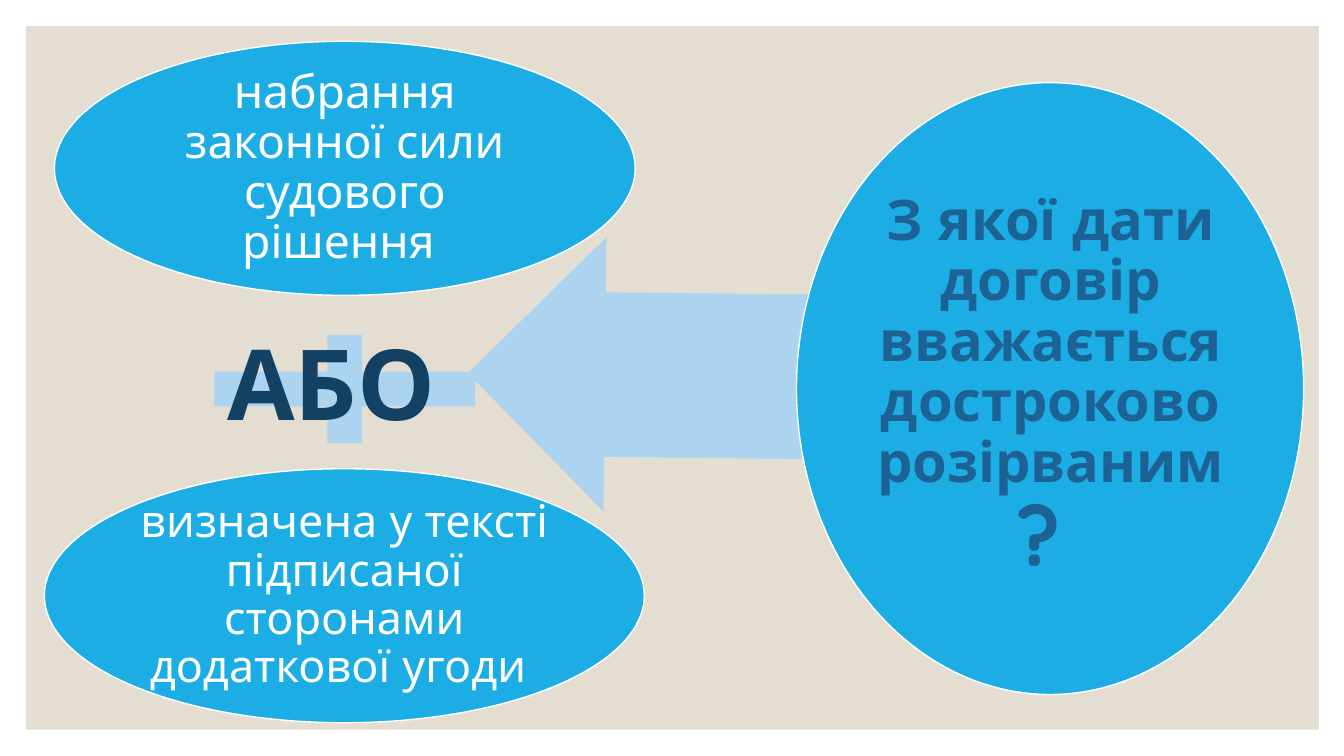
"""Build the slide on the date from which a contract counts as terminated early."""
from dataclasses import dataclass
from typing import Optional

from pptx import Presentation
from pptx.dml.color import RGBColor
from pptx.enum.shapes import MSO_SHAPE as Preset
from pptx.enum.text import MSO_ANCHOR as Anchor, MSO_AUTO_SIZE as AutoSize, PP_ALIGN as Align
from pptx.util import Emu, Pt

EMU_PER_PX = 9144
FONT = "Quicksand"
WHITE = RGBColor(0xFF, 0xFF, 0xFF)
SAND = RGBColor(0xE3, 0xDE, 0xD1)
BLUE = RGBColor(0x1C, 0xAD, 0xE4)
PALE_BLUE = RGBColor(0xAC, 0xD3, 0xEF)
NAVY = RGBColor(0x13, 0x41, 0x63)
DEEP_BLUE = RGBColor(0x1D, 0x62, 0x94)


def px(length: int) -> Emu:
    """Turn px into EMU."""
    return Emu(length * EMU_PER_PX)


@dataclass(frozen=True)
class Phrase:
    """Words in one size and colour."""
    words: str
    size: int
    colour: RGBColor = WHITE
    bold: bool = False


@dataclass(frozen=True)
class Figure:
    """A filled preset shape with an optional phrase inside."""
    preset: Preset
    box: tuple[int, int, int, int]
    fill: RGBColor
    outlined: bool = False
    phrase: Optional[Phrase] = None
    inset: int = 0
    rotation: float = 0
    adjustments: tuple[float, ...] = ()


FIGURES = (
    Figure(Preset.RECTANGLE, (26, 26, 1282, 698), SAND),
    Figure(Preset.OVAL, (54, 41, 576, 252), BLUE, True,
           Phrase("набрання законної сили судового рішення ", 33), 5),
    Figure(Preset.MATH_PLUS, (166, 313, 352, 146), PALE_BLUE,
           phrase=Phrase("АБО ", 70, NAVY, True)),
    Figure(Preset.OVAL, (44, 465, 595, 252), BLUE, True,
           Phrase("визначена у тексті підписаної сторонами додаткової угоди ", 32), 4),
    Figure(Preset.RIGHT_ARROW, (464, 236, 339, 272), PALE_BLUE,
           rotation=180.6, adjustments=(0.6, 0.5)),
    Figure(Preset.OVAL, (790, 82, 503, 607), BLUE, True),
)
QUESTION_BOX = (860, 171, 364, 429)
QUESTION = (
    Phrase("З якої дати договір вважається достроково розірваним", 40, DEEP_BLUE, True),
    Phrase("? ", 60, DEEP_BLUE, True),
)


def apply_format(target: object, values: dict[str, object]) -> None:
    """Set each named attribute on the target."""
    for name, value in values.items():
        setattr(target, name, value)


def write_phrases(holder: object, phrases: tuple[Phrase, ...], inset: int) -> None:
    """Write the phrases as one centred paragraph."""
    frame = holder.text_frame
    margins = {f"margin_{side}": px(inset) for side in ("left", "top", "right", "bottom")}
    apply_format(frame, {"word_wrap": True, "auto_size": AutoSize.NONE,
                         "vertical_anchor": Anchor.MIDDLE, **margins})
    paragraph = frame.paragraphs[0]
    apply_format(paragraph, {"alignment": Align.CENTER, "line_spacing": 0.9,
                             "space_before": Pt(0)})
    for phrase in phrases:
        run = paragraph.add_run()
        run.text = phrase.words
        apply_format(run.font, {"name": FONT, "size": Pt(phrase.size), "bold": phrase.bold})
        run.font.color.rgb = phrase.colour


def draw_figure(slide: object, figure: Figure) -> None:
    """Draw one figure with its phrase."""
    shape = slide.shapes.add_shape(figure.preset, *map(px, figure.box))
    shape.rotation = figure.rotation
    shape.shadow.inherit = False
    shape.fill.solid()
    shape.fill.fore_color.rgb = figure.fill
    if figure.outlined:
        shape.line.color.rgb = WHITE
        shape.line.width = Pt(1)
    else:
        shape.line.fill.background()
    for index, value in enumerate(figure.adjustments):
        shape.adjustments[index] = value
    if figure.phrase:
        write_phrases(shape, (figure.phrase,), figure.inset)


def place_question(slide: object) -> None:
    """Set the question as the title in front of the large oval."""
    question = slide.shapes.title
    apply_format(question, dict(zip(("left", "top", "width", "height"), map(px, QUESTION_BOX))))
    write_phrases(question, QUESTION, 6)
    slide.shapes._spTree.append(question._element)


def main() -> None:
    """Build and save the presentation."""
    deck = Presentation()
    apply_format(deck, {"slide_width": px(1333), "slide_height": px(750)})
    slide = deck.slides.add_slide(deck.slide_layouts.get_by_name("Title Only"))
    for figure in FIGURES:
        draw_figure(slide, figure)
    place_question(slide)
    deck.save("out.pptx")


if __name__ == "__main__":
    main()
